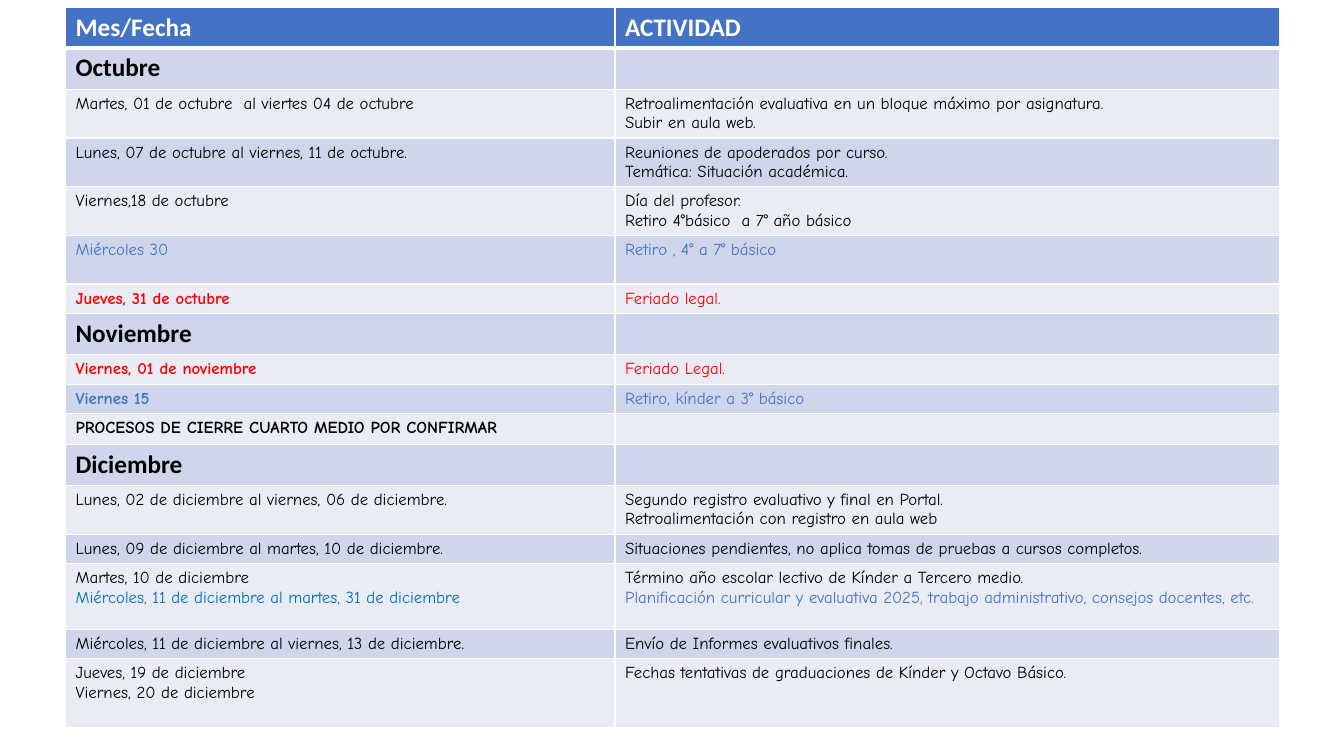
from dataclasses import dataclass

from lxml import etree
from pptx import Presentation
from pptx import util as u
from pptx.dml.color import RGBColor
from pptx.oxml.ns import qn


@dataclass(frozen=True)
class Theme:
    """Colours, fonts and sizes of the calendar."""
    blue: str = "4472C4"
    bright_blue: str = "0070C0"
    red: str = "FF0000"
    black: str = "000000"
    white: str = "FFFFFF"
    bands: tuple = ("E9EBF5", "CFD5EA")
    heading_font: str = "Calibri"
    body_font: str = "Comic Neue"
    heading_size: int = 18
    body_size: int = 12


THEME = Theme()
BLUE = {"color": THEME.blue}
RED = {"color": THEME.red}
BOLD = {"bold": True}
HEADING = {"bold": True, "font": THEME.heading_font, "size": THEME.heading_size}
HEADER = {**HEADING, "color": THEME.white}

HEADING_HEIGHT, ONE_LINE, TWO_LINES = 0.41, 0.29, 0.48

CALENDAR = [
    (0.4, [("Mes/Fecha", HEADER)], [("ACTIVIDAD", HEADER)]),
    (HEADING_HEIGHT, [("Octubre", HEADING)], []),
    (TWO_LINES, [("Martes, 01 de octubre  al viertes 04 de octubre", {})],
     [("Retroalimentación evaluativa en un bloque máximo por asignatura.", {}),
      ("Subir en aula web.", {})]),
    (TWO_LINES, [("Lunes, 07 de octubre al viernes, 11 de octubre.", {})],
     [("Reuniones de apoderados por curso.", {}),
      ("Temática: Situación académica.", {})]),
    (TWO_LINES, [("Viernes,18 de octubre", {})],
     [("Día del profesor.", {}), ("Retiro 4°básico  a 7° año básico", {})]),
    (TWO_LINES, [("Miércoles 30", BLUE)], [("Retiro , 4° a 7° básico", BLUE)]),
    (ONE_LINE, [("Jueves, 31 de octubre", RED | BOLD)], [("Feriado legal.", RED)]),
    (HEADING_HEIGHT, [("Noviembre", HEADING)], []),
    (ONE_LINE, [("Viernes, 01 de noviembre", RED | BOLD)], [("Feriado Legal.", RED)]),
    (ONE_LINE, [("Viernes 15", BLUE | BOLD)], [("Retiro, kínder a 3° básico", BLUE)]),
    (ONE_LINE, [("PROCESOS DE CIERRE CUARTO MEDIO POR CONFIRMAR", BOLD)], []),
    (HEADING_HEIGHT, [("Diciembre", HEADING)], []),
    (TWO_LINES, [("Lunes, 02 de diciembre al viernes, 06 de diciembre.", {})],
     [("Segundo registro evaluativo y final en Portal.", {}),
      ("Retroalimentación con registro en aula web", {})]),
    (ONE_LINE, [("Lunes, 09 de diciembre al martes, 10 de diciembre.", {})],
     [("Situaciones pendientes, no aplica tomas de pruebas a cursos completos.", {})]),
    (0.65, [("Martes, 10 de diciembre", {}),
            ("Miércoles, 11 de diciembre al martes, 31 de diciembre",
             {"color": THEME.bright_blue})],
     [("Término año escolar lectivo de Kínder a Tercero medio.", {}),
      ("Planificación curricular y evaluativa 2025, trabajo administrativo, "
       "consejos docentes, etc.", BLUE)]),
    (ONE_LINE, [("Miércoles, 11 de diciembre al viernes, 13 de diciembre.", {})],
     [("Envío de Informes evaluativos finales.", {})]),
    (0.68, [("Jueves, 19 de diciembre", {}), ("Viernes, 20 de diciembre", {})],
     [("Fechas tentativas de graduaciones de Kínder y Octavo Básico.", {})]),
]


def write(paragraph, text, *, font=THEME.body_font, size=THEME.body_size,
          color=THEME.black, bold=False):
    """Write formatted text into a paragraph."""
    run = paragraph.add_run()
    run.text = text
    run.font.name = font
    run.font.size = u.Pt(size)
    run.font.bold = bold
    run.font.color.rgb = RGBColor.from_string(color)


def border_cell(cell, bottom):
    """Draw white borders, with a bottom border of its own width in points."""
    properties = cell._tc.get_or_add_tcPr()
    for side, width in (("L", 1), ("R", 1), ("T", 1), ("B", bottom)):
        line = etree.SubElement(properties, qn(f"a:ln{side}"), w=str(u.Pt(width)))
        solid = etree.SubElement(line, qn("a:solidFill"))
        etree.SubElement(solid, qn("a:srgbClr"), val=THEME.white)


def fill_cell(cell, lines, fill, bottom=1):
    """Give a cell its borders, fill and lines of text."""
    border_cell(cell, bottom)
    cell.fill.solid()
    cell.fill.fore_color.rgb = RGBColor.from_string(fill)
    frame = cell.text_frame
    for index, (line, style) in enumerate(lines):
        paragraph = frame.add_paragraph() if index else frame.paragraphs[0]
        write(paragraph, line, **style)
    if not lines:
        etree.SubElement(frame.paragraphs[0]._p, qn("a:endParaRPr"),
                         sz=str(THEME.body_size * 100))


def add_calendar(slide, left, top, widths):
    """Place the table of dates and activities."""
    height = sum(row[0] for row in CALENDAR)
    calendar = slide.shapes.add_table(
        len(CALENDAR), len(widths), u.Inches(left), u.Inches(top),
        u.Inches(sum(widths)), u.Inches(height)).table
    for column, width in zip(calendar.columns, widths):
        column.width = u.Inches(width)
    for index, (row_height, *entries) in enumerate(CALENDAR):
        calendar.rows[index].height = u.Inches(row_height)
        fill = THEME.bands[index % 2] if index else THEME.blue
        for column, lines in enumerate(entries):
            fill_cell(calendar.cell(index, column), lines, fill,
                      bottom=1 if index else 3)


def main():
    """Build and save the calendar slide."""
    deck = Presentation()
    deck.slide_width, deck.slide_height = u.Inches(13.33), u.Inches(7.5)
    slide = deck.slides.add_slide(deck.slide_layouts[6])
    add_calendar(slide, 0.65, 0.07, (5.45, 6.59))
    deck.save("out.pptx")


if __name__ == "__main__":
    main()
